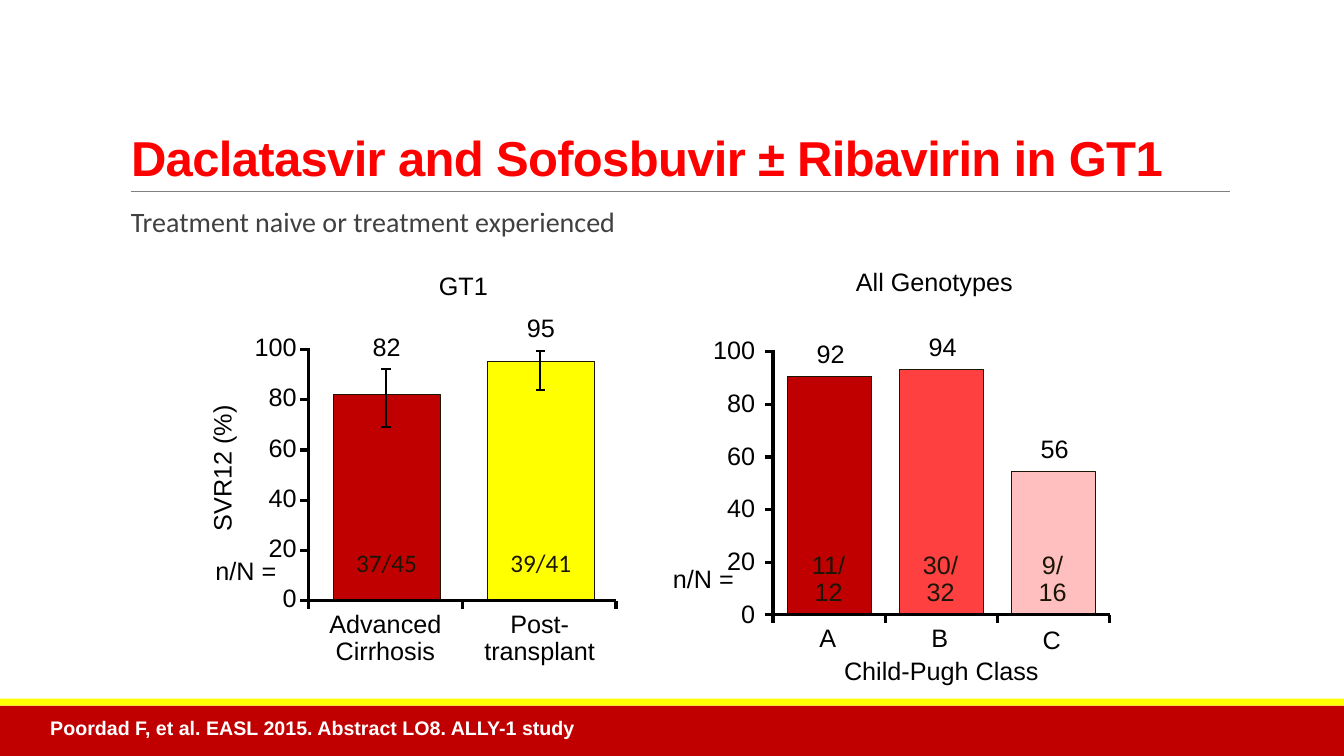
import pptx
import pptx.util
import pptx.dml.color
import pptx.enum.shapes
import pptx.enum.text
import pptx.oxml

Pt = pptx.util.Pt
RGB = pptx.dml.color.RGBColor
Align = pptx.enum.text.PP_ALIGN
Anchor = pptx.enum.text.MSO_ANCHOR
Fit = pptx.enum.text.MSO_AUTO_SIZE
Shape = pptx.enum.shapes.MSO_SHAPE
Link = pptx.enum.shapes.MSO_CONNECTOR

BLACK = RGB(0, 0, 0)
WHITE = RGB(255, 255, 255)
DARK = RGB(0x1A, 0x15, 0x04)
SLATE = RGB(0x40, 0x40, 0x40)
GRAY = RGB(0x80, 0x80, 0x80)
RED = RGB(255, 0, 0)
CRIMSON = RGB(0xC0, 0, 0)
CORAL = RGB(0xFF, 0x40, 0x40)
PINK = RGB(0xFF, 0xBF, 0xBF)
YELLOW = RGB(255, 255, 0)


class Deck:
    font = "Arial"
    size = 18
    high = 27

    def __init__(self, prs):
        self.slide = prs.slides.add_slide(prs.slide_layouts[5])
        self.shapes = self.slide.shapes

    def runs(self, para, text, size, color, font, bold=False):
        for i, part in enumerate(text.split("\n")):
            if i:
                para.add_line_break()
            run = para.add_run()
            run.text = part
            run.font.name = font
            run.font.size = Pt(size)
            run.font.bold = bold
            run.font.color.rgb = color
        return para.runs

    def title(self, text, left, top, width, height):
        box = self.shapes.title
        box.left, box.top = Pt(left), Pt(top)
        box.width, box.height = Pt(width), Pt(height)
        frame = box.text_frame
        frame.auto_size = Fit.NONE
        frame.vertical_anchor = Anchor.BOTTOM
        para = frame.paragraphs[0]
        para.alignment = Align.LEFT
        para.line_spacing = 0.85
        for run in self.runs(para, text, 35, RED, self.font, True):
            run._r.get_or_add_rPr().set("spc", "-50")

    def text(self, text, left, top, width, height=high, align=Align.CENTER,
             size=size, color=BLACK, font=font, bold=False, space=0.9,
             wrap=True, turn=0, anchor=Anchor.TOP):
        box = self.shapes.add_textbox(Pt(left), Pt(top), Pt(width), Pt(height))
        box.rotation = turn
        frame = box.text_frame
        frame.word_wrap = wrap
        frame.auto_size = Fit.SHAPE_TO_FIT_TEXT
        frame.vertical_anchor = anchor
        para = frame.paragraphs[0]
        para.alignment = align
        para.line_spacing = space
        self.runs(para, text, size, color, font, bold)

    def rect(self, left, top, width, height, fill, edge=None):
        box = self.shapes.add_shape(
            Shape.RECTANGLE, Pt(left), Pt(top), Pt(width), Pt(height))
        box.shadow.inherit = False
        box.fill.solid()
        box.fill.fore_color.rgb = fill
        if edge is None:
            box.line.fill.background()
        else:
            box.line.color.rgb = edge
            box.line.width = Pt(0.75)

    def line(self, x1, y1, x2, y2, width=2.25, color=BLACK, home=None):
        line = (home or self.shapes).add_connector(
            Link.STRAIGHT, Pt(x1), Pt(y1), Pt(x2), Pt(y2))
        line.line.color.rgb = color
        line.line.width = Pt(width)
        line._element.spPr.append(pptx.oxml.parse_xml(
            '<a:effectLst xmlns:a='
            '"http://schemas.openxmlformats.org/drawingml/2006/main"/>'))

    def axes(self, x, base, step, gap, rise, slot, count):
        self.line(x, base, x, base - 5 * step - 1)
        self.line(x - 1, base, x + slot * count, base)
        for i in range(6):
            y = base - i * step
            self.line(x - 1, y, x - 6, y)
            self.text(str(20 * i), x - gap - 60, y - rise, 60,
                      align=Align.RIGHT)
        for i in range(count + 1):
            self.line(x + i * slot, base, x + i * slot, base + 6)

    def whisk(self, x, top, low):
        home = self.shapes.add_group_shape().shapes
        for y in (top, low):
            self.line(x - 3.3, y, x + 3.3, y, 1.5, home=home)
        self.line(x, top, x, low, 1.5, home=home)


def main():
    prs = pptx.Presentation()
    prs.slide_width, prs.slide_height = Pt(960), Pt(540)
    deck = Deck(prs)

    deck.rect(0, 504, 960, 36, CRIMSON)
    deck.rect(0, 499, 960, 5, YELLOW)
    deck.line(93.6, 136.8, 878.4, 136.8, 0.5, GRAY)
    deck.title("Daclatasvir and Sofosbuvir ± Ribavirin in GT1",
               86.4, 22.3, 792, 114.5)
    deck.text("Treatment naive or treatment experienced", 86.4, 145.4, 792, 30,
              align=Align.LEFT, size=20, color=SLATE, font="Calibri")
    deck.text("Poordad F, et al. EASL 2015. Abstract LO8. ALLY-1 study",
              28.8, 507.6, 674, 24.5, align=Align.LEFT, size=14, color=WHITE,
              bold=True, space=1, anchor=Anchor.BOTTOM)

    base = 429.1
    deck.text("GT1", 190, 192.2, 282)
    deck.text("SVR12 (%)", 63.4, 321, 193, turn=270)
    groups = (
        ("Advanced\nCirrhosis", "82", "37/45", CRIMSON, 281.5, 235.4, 263.5, 305.3),
        ("Post-transplant", "95", "39/41", YELLOW, 258.5, 221.8, 250.6, 278.6),
    )
    for i, (name, rate, ratio, fill, top, mark, high, low) in enumerate(groups):
        x = 238.3 + 110.2 * i
        deck.rect(x, top, 76.3, base - top, fill, DARK)
        deck.whisk(x + 37.5, high, low)
        deck.text(rate, x, mark, 75.6)
        deck.text(ratio, x, 389.5, 75.6, color=DARK, font="Calibri")
        deck.text(name, x - 18.5, 433.4, 111, 47)
    deck.axes(220.6, base, 35.9, 1.6, 14, 109.7, 2)
    deck.text("n/N =", 146.2, 395.3, 58.3, align=Align.RIGHT, wrap=False)

    base = 439.2
    deck.text("All Genotypes", 552.2, 189.4, 230.4)
    classes = (
        ("A", "92", "11/\n12", CRIMSON, 268.6, 240.5, 443.5),
        ("B", "94", "30/\n32", CORAL, 264.2, 235.4, 443.5),
        ("C", "56", "9/\n16", PINK, 337, 308.2, 445),
    )
    for i, (name, rate, ratio, fill, top, mark, foot) in enumerate(classes):
        x = 562.3 + 80 * i
        deck.rect(x, top, 60.5, base - top, fill, DARK)
        deck.text(rate, x, mark, 62)
        deck.text(ratio, x - 1.5, 391, 62, 47, color=DARK)
        deck.text(name, x - 10.5, foot, 79)
    deck.axes(552.2, base, 37.6, 5.7, 13.2, 80.2, 3)
    deck.text("Child-Pugh Class", 552.2, 466.6, 240.5)
    deck.text("n/N =", 473, 401, 58.3, align=Align.RIGHT, wrap=False)

    prs.save("out.pptx")


if __name__ == "__main__":
    main()
